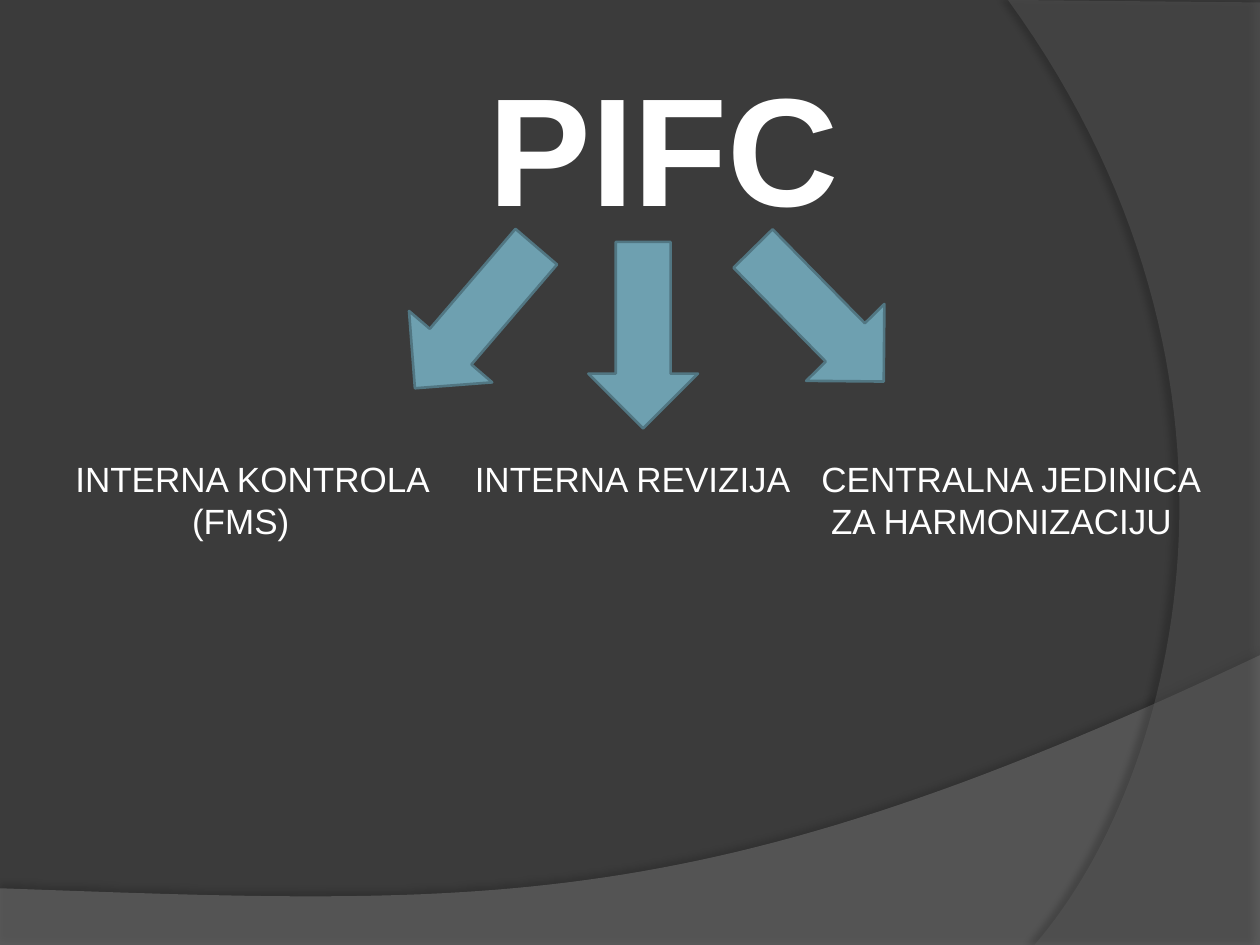
from lxml.etree import SubElement
from pptx import Presentation
from pptx.dml.color import RGBColor
from pptx.enum.shapes import MSO_SHAPE
from pptx.enum.text import PP_ALIGN
from pptx.oxml.ns import qn
from pptx.util import Pt

THEME = {
    "font": "Arial",
    "title_size": 88,
    "label_size": 20,
    "background": "3B3B3B",
    "text": "FFFFFF",
    "arrow": "6EA0B0",
    "arrow_line": "517682",
    "shadow": "000000",
}

TITLE = "PIFC"
LABELS = [
    (36, 223.2, [("INTERNA KONTROLA", 0), ("(FMS)", 66.7)]),
    (264.24, 196.56, [("INTERNA REVIZIJA", 0)]),
    (462.24, 234, [("CENTRALNA JEDINICA", 0), ("ZA HARMONIZACIJU", 5.56)]),
]
LABEL_TOP = 257.76
LINE_HEIGHT = 24

ARROW_SIZE = (62.64, 106.56)
ARROWS = [(240.48, 128.16, 40.6), (336.24, 138.24, 0), (436.32, 126.72, 315.5)]

WAVES = [
    {
        "before": [(0, 540.72), (720, 540.72)],
        "curve": [(720, 374.4), (402.48, 524.88), (281.52, 517.68), (0, 507.6)],
        "fill": "7F7F7F", "opacity": 45,
        "shadow_opacity": 35, "blur": 4, "distance": 3.5, "direction": 270,
    },
    {
        "before": [(720, 1.44), (720, 540)],
        "curve": [(591.12, 540), (673.2, 445.68), (732.96, 216), (576, 0)],
        "fill": "5E5E5E", "opacity": 40,
        "shadow_opacity": 45, "blur": 4, "distance": 4, "direction": 180,
    },
]
CURVE_STEPS = 60


def color(name):
    return RGBColor.from_string(THEME.get(name, name))


def curve_points(controls):
    for step in range(CURVE_STEPS + 1):
        t = step / CURVE_STEPS
        weights = ((1 - t) ** 3, 3 * t * (1 - t) ** 2, 3 * t * t * (1 - t), t ** 3)
        yield tuple(sum(w * point[axis] for w, point in zip(weights, controls))
                    for axis in (0, 1))


def set_opacity(color_element, percent):
    SubElement(color_element, qn("a:alpha")).set("val", str(percent * 1000))


def add_wave(page, wave):
    points = [(Pt(x), Pt(y)) for x, y in [*wave["before"], *curve_points(wave["curve"])]]
    builder = page.shapes.build_freeform(*points[0])
    builder.add_line_segments(points[1:], close=True)
    shape = builder.convert_to_shape()
    shape.fill.solid()
    shape.fill.fore_color.rgb = color(wave["fill"])
    shape.line.fill.background()
    shape.shadow.inherit = False
    properties = shape.element.spPr
    set_opacity(properties.find(qn("a:solidFill")).find(qn("a:srgbClr")), wave["opacity"])
    shadow = SubElement(properties.find(qn("a:effectLst")), qn("a:outerShdw"))
    shadow.set("blurRad", str(Pt(wave["blur"])))
    shadow.set("dist", str(Pt(wave["distance"])))
    shadow.set("dir", str(wave["direction"] * 60000))
    shadow_color = SubElement(shadow, qn("a:srgbClr"))
    shadow_color.set("val", THEME["shadow"])
    set_opacity(shadow_color, wave["shadow_opacity"])


def add_arrow(page, left, top, rotation):
    width, height = ARROW_SIZE
    arrow = page.shapes.add_shape(MSO_SHAPE.DOWN_ARROW, Pt(left), Pt(top), Pt(width), Pt(height))
    arrow.rotation = rotation
    arrow.fill.solid()
    arrow.fill.fore_color.rgb = color("arrow")
    arrow.line.color.rgb = color("arrow_line")
    arrow.line.width = Pt(1.5)
    arrow.shadow.inherit = False


def add_text(page, left, top, width, height, lines, size, bold=False):
    box = page.shapes.add_textbox(Pt(left), Pt(top), Pt(width), Pt(height))
    frame = box.text_frame
    frame.word_wrap = True
    frame.text = "\n".join(text for text, indent in lines)
    for para, (text, indent) in zip(frame.paragraphs, lines):
        if indent:
            para._p.get_or_add_pPr().set("marL", str(Pt(indent)))
        for span in para.runs:
            span.font.name = THEME["font"]
            span.font.size = Pt(size)
            span.font.bold = bold
            span.font.color.rgb = color("text")
    return frame


def main():
    deck = Presentation()
    deck.slide_width, deck.slide_height = Pt(720), Pt(540)
    page = deck.slides.add_slide(deck.slide_layouts[6])
    page.background.fill.solid()
    page.background.fill.fore_color.rgb = color("background")

    for wave in WAVES:
        add_wave(page, wave)

    title = add_text(page, 36, 18, 684, 464.4, [(TITLE, 0)], THEME["title_size"], bold=True)
    title.margin_top = Pt(12)
    title.margin_left = Pt(10)
    title.paragraphs[0].alignment = PP_ALIGN.CENTER

    for arrow in ARROWS:
        add_arrow(page, *arrow)
    for left, width, lines in LABELS:
        height = 7.2 + LINE_HEIGHT * len(lines)
        add_text(page, left, LABEL_TOP, width, height, lines, THEME["label_size"])

    deck.save("out.pptx")


if __name__ == "__main__":
    main()
